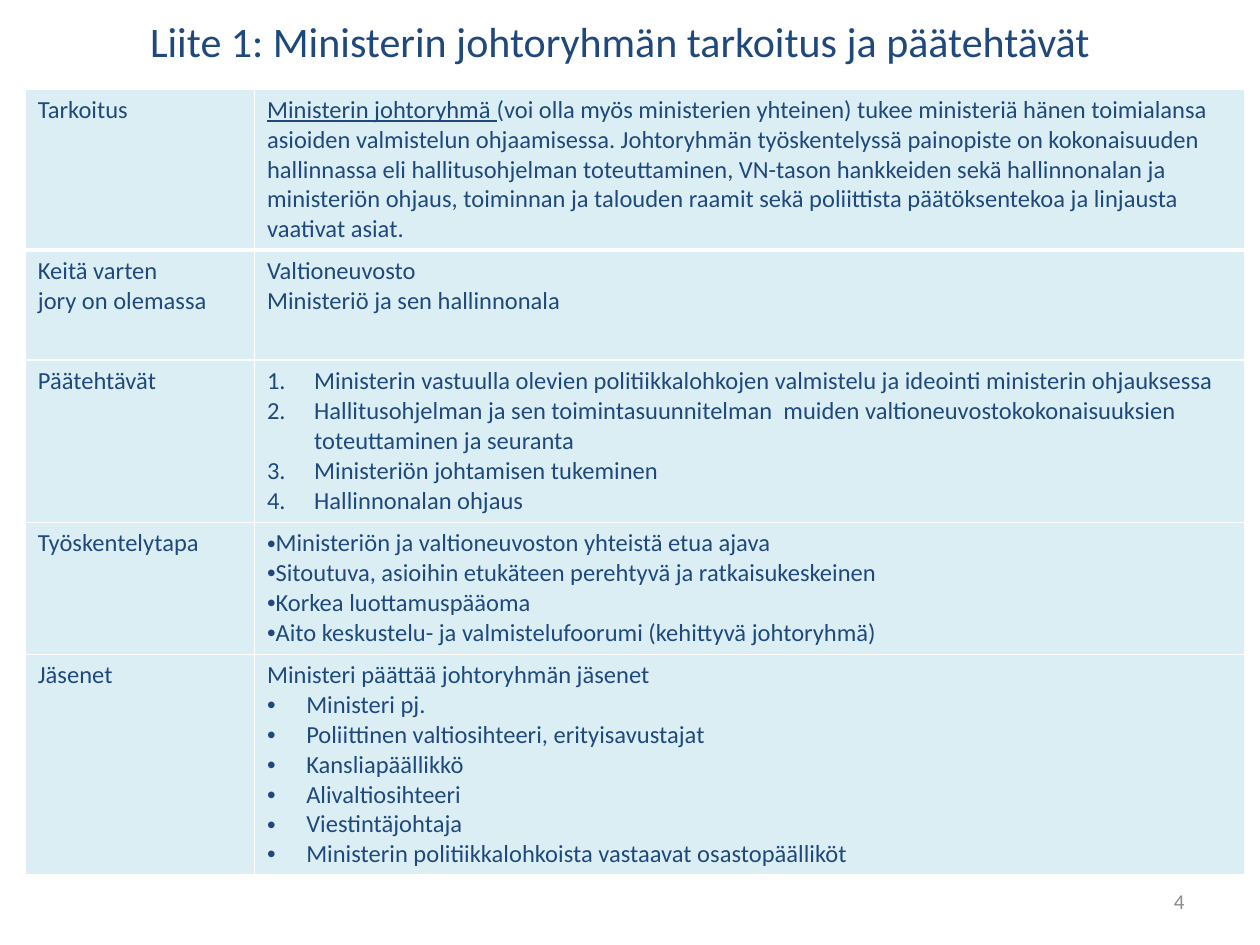
"""Builds the appendix slide on the purpose and tasks of a minister's management group."""
from lxml import etree
from pptx import Presentation
from pptx import util as u
from pptx.dml import color
from pptx.enum import text
from pptx.oxml import ns

FONT = "Calibri"
NAVY, GREY, PALE, WHITE = "1F497D", "8C8C8C", "DBEEF4", "FFFFFF"
COLUMNS = (4.62, 19.96)
NUMBERED = {"mark": "1.", "left": 0.95, "hang": 0.95}
FLUSH = {"mark": "•", "left": 0, "hang": 0.79}
BULLETED = {"mark": "•", "left": 0.79, "hang": 0.79}

PURPOSE = (
    "(voi olla myös ministerien yhteinen) tukee ministeriä hänen toimialansa asioiden "
    "valmistelun ohjaamisessa. Johtoryhmän työskentelyssä painopiste on kokonaisuuden "
    "hallinnassa eli hallitusohjelman toteuttaminen, VN-tason hankkeiden sekä hallinnonalan "
    "ja ministeriön ohjaus, toiminnan ja talouden raamit sekä poliittista päätöksentekoa ja "
    "linjausta vaativat asiat."
)
AUDIENCE = ["Valtioneuvosto", "Ministeriö ja sen hallinnonala"]
TASKS = [
    "Ministerin vastuulla olevien politiikkalohkojen valmistelu ja ideointi ministerin ohjauksessa",
    "Hallitusohjelman ja sen toimintasuunnitelman  muiden valtioneuvostokokonaisuuksien "
    "toteuttaminen ja seuranta",
    "Ministeriön johtamisen tukeminen",
    "Hallinnonalan ohjaus",
]
METHODS = [
    "Ministeriön ja valtioneuvoston yhteistä etua ajava",
    "Sitoutuva, asioihin etukäteen perehtyvä ja ratkaisukeskeinen",
    "Korkea luottamuspääoma",
    "Aito keskustelu- ja valmistelufoorumi (kehittyvä johtoryhmä)",
]
MEMBERS = [
    "Ministeri pj.",
    "Poliittinen valtiosihteeri, erityisavustajat",
    "Kansliapäällikkö",
    "Alivaltiosihteeri",
    "Viestintäjohtaja",
    "Ministerin politiikkalohkoista vastaavat osastopäälliköt",
]


def rgb(value):
    """Return the colour for a hex string."""
    return color.RGBColor.from_string(value)


def add_span(para, words, size=14, ink=NAVY, underline=None):
    """Add a formatted run to a paragraph."""
    span = para.add_run()
    span.text = words
    span.font.name = FONT
    span.font.size = u.Pt(size)
    span.font.color.rgb = rgb(ink)
    span.font.underline = underline


def set_bullet(para, mark, left, hang):
    """Give a paragraph a bullet or an automatic number with a hanging indent."""
    properties = para._p.get_or_add_pPr()
    properties.set("marL", str(u.Cm(left)))
    properties.set("indent", str(-u.Cm(hang)))
    if mark == "1.":
        etree.SubElement(properties, ns.qn("a:buAutoNum"), type="arabicPeriod")
    else:
        etree.SubElement(properties, ns.qn("a:buFont"), typeface="Arial")
        etree.SubElement(properties, ns.qn("a:buChar"), char=mark)


def fill_lines(frame, lines):
    """Write (spans, bullet) pairs as the paragraphs of a text frame."""
    for index, (spans, bullet) in enumerate(lines):
        para = frame.add_paragraph() if index else frame.paragraphs[0]
        if bullet:
            set_bullet(para, **bullet)
        for words, underline in spans:
            add_span(para, words, underline=underline)


def as_lines(items, bullet=None):
    """Turn plain strings into lines that share one bullet style."""
    return [([(item, None)], bullet) for item in items]


def add_label(page, words, left, top, width, height, size, ink, align):
    """Add a one-line text box centred vertically."""
    box = page.shapes.add_textbox(*map(u.Cm, (left, top, width, height)))
    frame = box.text_frame
    frame.word_wrap = True
    frame.vertical_anchor = text.MSO_ANCHOR.MIDDLE
    para = frame.paragraphs[0]
    para.alignment = align
    add_span(para, words, size, ink)


def set_border(cell, side, width):
    """Draw one white border of a cell."""
    properties = cell._tc.get_or_add_tcPr()
    line = etree.SubElement(properties, ns.qn(f"a:ln{side}"), w=str(u.Pt(width)))
    solid = etree.SubElement(line, ns.qn("a:solidFill"))
    etree.SubElement(solid, ns.qn("a:srgbClr"), val=WHITE)


def add_grid(page, rows):
    """Add the two-column table from (height, heading lines, content lines) rows."""
    total = sum(row[0] for row in rows)
    frame = page.shapes.add_table(len(rows), len(COLUMNS), u.Cm(0.51), u.Cm(1.79),
                                  u.Cm(sum(COLUMNS)), u.Cm(total))
    table = frame.table
    for column, width in zip(table.columns, COLUMNS):
        column.width = u.Cm(width)
    for index, (height, *contents) in enumerate(rows):
        table.rows[index].height = u.Cm(height)
        for cell, lines in zip(table.rows[index].cells, contents):
            top, bottom = (3 if index == 1 else 1), (3 if index == 0 else 1)
            for side, width in zip("LRTB", (1, 1, top, bottom)):
                set_border(cell, side, width)
            cell.fill.solid()
            cell.fill.fore_color.rgb = rgb(PALE)
            fill_lines(cell.text_frame, lines)


def main():
    """Build and save the slide."""
    deck = Presentation()
    deck.slide_width, deck.slide_height = u.Cm(25.4), u.Cm(19.05)
    page = deck.slides.add_slide(deck.slide_layouts[6])
    add_label(page, "Liite 1: Ministerin johtoryhmän tarkoitus ja päätehtävät",
              0.3, -0.48, 24.4, 2.6, 24, NAVY, text.PP_ALIGN.CENTER)
    add_label(page, "4", 18.2, 17.65, 5.93, 1.02, 12, GREY, text.PP_ALIGN.RIGHT)
    purpose = [([("Ministerin johtoryhmä ", True), (PURPOSE, None)], None)]
    members = as_lines(["Ministeri päättää johtoryhmän jäsenet"]) + as_lines(MEMBERS, BULLETED)
    add_grid(page, [
        (3.25, as_lines(["Tarkoitus"]), purpose),
        (2.22, as_lines(["Keitä varten", "jory on olemassa"]), as_lines(AUDIENCE)),
        (3.27, as_lines(["Päätehtävät"]), as_lines(TASKS, NUMBERED)),
        (2.66, as_lines(["Työskentelytapa"]), as_lines(METHODS, FLUSH)),
        (4.45, as_lines(["Jäsenet"]), members),
    ])
    deck.save("out.pptx")


if __name__ == "__main__":
    main()
